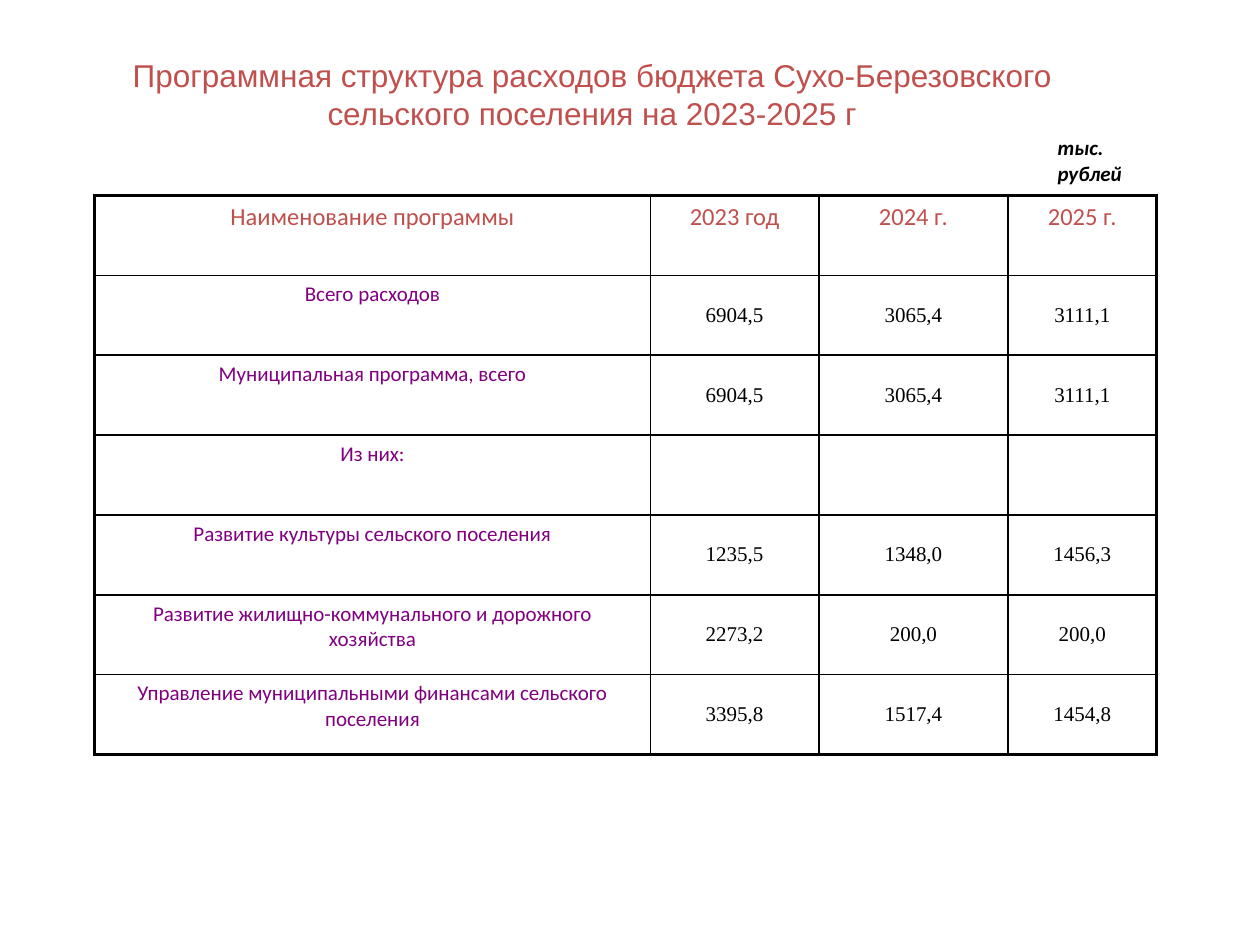
import pptx
import pptx.dml.color
import pptx.enum.text
import pptx.oxml
import pptx.oxml.ns
import pptx.util
from pptx.util import Cm

ALIGN = pptx.enum.text.PP_ALIGN
ANCHOR = pptx.enum.text.MSO_ANCHOR
THIN, THICK = 1, 2.25


def color(value):
    return pptx.dml.color.RGBColor.from_string(value)


class BudgetPage:
    """Holds the text styles and the current slide."""

    STYLES = {
        "title": ("C0504D", {"name": "Arial", "size": pptx.util.Pt(18)}),
        "unit": ("000000", {"name": "Calibri", "size": pptx.util.Pt(12), "bold": True, "italic": True}),
        "header": ("C0504D", {"name": "Calibri", "size": pptx.util.Pt(14)}),
        "program": ("800080", {"name": "Calibri", "size": pptx.util.Pt(12)}),
        "amount": ("000000", {"name": "Times New Roman", "size": pptx.util.Pt(12)}),
    }

    def __init__(self, deck):
        self.page = deck.slides.add_slide(deck.slide_layouts[5])

    def add_lines(self, frame, lines, style, align=ALIGN.CENTER):
        ink, formats = self.STYLES[style]
        for number, line in enumerate(lines):
            para = frame.add_paragraph() if number else frame.paragraphs[0]
            para.alignment = align
            span = para.add_run()
            span.text = line
            span.font.color.rgb = color(ink)
            for name, value in formats.items():
                setattr(span.font, name, value)

    def title(self, lines, left, top, width, height):
        box = self.page.shapes.title
        places = {"left": left, "top": top, "width": width, "height": height}
        for name, value in places.items():
            setattr(box, name, Cm(value))
        frame = box.text_frame
        frame.vertical_anchor = ANCHOR.TOP
        frame.auto_size = pptx.enum.text.MSO_AUTO_SIZE.NONE
        self.add_lines(frame, lines, "title")

    def note(self, text, left, top, width, height):
        box = self.page.shapes.add_textbox(Cm(left), Cm(top), Cm(width), Cm(height))
        frame = box.text_frame
        frame.word_wrap = True
        margins = {"margin_left": 0, "margin_top": 0, "margin_right": 0, "margin_bottom": 0}
        for name, value in margins.items():
            setattr(frame, name, value)
        self.add_lines(frame, [text], "unit", ALIGN.LEFT)

    def border(self, cell, side, points):
        namespace = pptx.oxml.ns.nsdecls("a")
        line = pptx.oxml.parse_xml(
            f'<a:ln{side} {namespace} w="{pptx.util.Pt(points)}">'
            '<a:solidFill><a:srgbClr val="000000"/></a:solidFill>'
            f'</a:ln{side}>')
        cell._tc.get_or_add_tcPr().append(line)

    def table(self, rows, widths, row_height, left, top):
        last_row, last_column = len(rows) - 1, len(widths) - 1
        table = self.page.shapes.add_table(
            len(rows), len(widths), Cm(left), Cm(top),
            Cm(sum(widths)), Cm(row_height * len(rows))).table
        table.first_row = table.horz_banding = False
        for column, width in zip(table.columns, widths):
            column.width = Cm(width)
        for r, row in enumerate(rows):
            table.rows[r].height = Cm(row_height)
            for c, text in enumerate(row):
                cell = table.cell(r, c)
                # Thick outer frame, thin inner grid
                outer = {"L": c == 0, "R": c == last_column, "T": r == 0, "B": r == last_row}
                for side, on_frame in outer.items():
                    self.border(cell, side, THICK if on_frame else THIN)
                cell.fill.background()
                style = "header" if r == 0 else "program" if c == 0 else "amount"
                if style == "amount":
                    cell.vertical_anchor = ANCHOR.MIDDLE
                    cell.margin_left = cell.margin_right = Cm(0.18)
                    cell.margin_top = cell.margin_bottom = 0
                if text:
                    self.add_lines(cell.text_frame, [text], style)


def main():
    deck = pptx.Presentation()
    deck.slide_width, deck.slide_height = Cm(25.4), Cm(19.05)
    budget = BudgetPage(deck)

    # Heading and unit of measure
    budget.title(["Программная структура расходов бюджета Сухо-Березовского",
                  "сельского поселения на 2023-2025 г"], 1.5, 1, 20.88, 1.78)
    budget.note("тыс. рублей", 21.32, 2.72, 2.3, 1.02)

    # Expenses by program
    rows = [
        ("Наименование программы", "2023 год", "2024 г.", "2025 г."),
        ("Всего расходов", "6904,5", "3065,4", "3111,1"),
        ("Муниципальная программа, всего", "6904,5", "3065,4", "3111,1"),
        ("Из них:", "", "", ""),
        ("Развитие культуры сельского поселения", "1235,5", "1348,0", "1456,3"),
        ("Развитие жилищно-коммунального и дорожного хозяйства", "2273,2", "200,0", "200,0"),
        ("Управление муниципальными финансами сельского поселения", "3395,8", "1517,4", "1454,8"),
    ]
    budget.table(rows, widths=[11.2, 3.4, 3.81, 3], row_height=1.61, left=1.91, top=3.94)

    deck.save("out.pptx")


if __name__ == "__main__":
    main()
